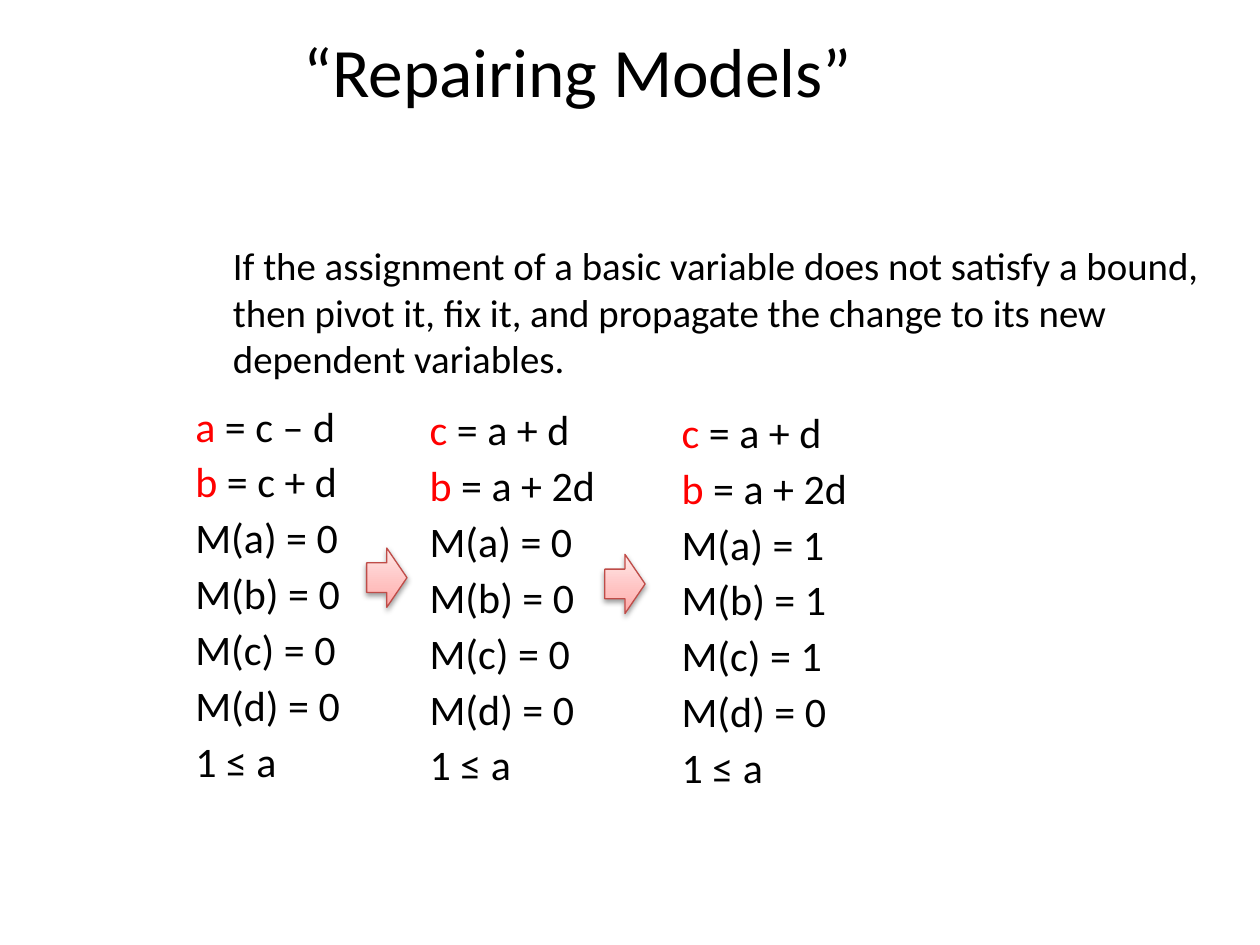
from dataclasses import dataclass

import lxml.etree
import pptx
import pptx.dml.color
import pptx.enum.shapes
import pptx.enum.text
import pptx.oxml.ns
import pptx.util

Inches = pptx.util.Inches
Pt = pptx.util.Pt
qn = pptx.oxml.ns.qn
Anchor = pptx.enum.text.MSO_ANCHOR
Align = pptx.enum.text.PP_ALIGN

BLACK = "000000"
RED = "FF0000"
EDGE = "BF4C48"
STOPS = {0: "FFA6A5", 35: "FFC0BF", 100: "FFE7E7"}


@dataclass
class Box:
    left: float
    top: float
    width: float
    height: float

    def place(self) -> list:
        return [Inches(v) for v in (self.left, self.top, self.width, self.height)]


@dataclass
class Model:
    box: Box
    rows: list[tuple[str, str]]
    values: str


def paint(code: str) -> pptx.dml.color.RGBColor:
    return pptx.dml.color.RGBColor.from_string(code)


def apply(target, style: dict) -> None:
    for key, value in style.items():
        setattr(target, key, value)


def add_text(slide, box: Box, lines: list, size: float, frame: dict, para: dict) -> None:
    body = slide.shapes.add_textbox(*box.place()).text_frame
    apply(body, {"word_wrap": True, **frame})
    for i, line in enumerate(lines):
        p = body.add_paragraph() if i else body.paragraphs[0]
        apply(p, para)
        for text, code in line:
            run = p.add_run()
            run.text = text
            apply(run.font, {"name": "Calibri", "size": Pt(size)})
            run.font.color.rgb = paint(code)


def add_model(slide, model: Model) -> None:
    lines = [[(head, RED), (tail, BLACK)] for head, tail in model.rows]
    lines += [[(f"M({name}) = {value}", BLACK)] for name, value in zip("abcd", model.values)]
    lines.append([("1 ≤ a", BLACK)])
    frame = {f"margin_{side}": 0 for side in ("left", "top", "right", "bottom")}
    add_text(slide, model.box, lines, 24, frame,
             {"line_spacing": 0.9, "space_before": Pt(6)})


def add_node(parent, tag: str, **values):
    return lxml.etree.SubElement(parent, qn(tag), **values)


def add_arrow(slide, box: Box) -> None:
    arrow = slide.shapes.add_shape(
        pptx.enum.shapes.MSO_SHAPE.RIGHT_ARROW, *box.place())
    arrow.line.color.rgb = paint(EDGE)
    arrow.line.width = Pt(0.75)
    arrow.fill.gradient()
    arrow.fill.gradient_angle = 90
    props = arrow.element.spPr
    stops = props.find(qn("a:gradFill")).find(qn("a:gsLst"))
    for old in list(stops):
        stops.remove(old)
    for pos, code in STOPS.items():
        stop = add_node(stops, "a:gs", pos=str(pos * 1000))
        add_node(stop, "a:srgbClr", val=code)
    arrow.shadow.inherit = False
    shade = add_node(props.find(qn("a:effectLst")), "a:outerShdw",
                     blurRad=str(Pt(3.1)), dist=str(Pt(1.6)),
                     dir="5400000", rotWithShape="0")
    tint = add_node(shade, "a:srgbClr", val=BLACK)
    add_node(tint, "a:alpha", val="38000")


PIVOT = [("c", " = a + d"), ("b", " = a + 2d")]
MODELS = [
    Model(Box(1.55, 3.22, 1.29, 3.05), [("a", " = c – d"), ("b", " = c + d")], "0000"),
    Model(Box(3.41, 3.25, 1.77, 3.05), PIVOT, "0000"),
    Model(Box(5.41, 3.27, 1.77, 3.05), PIVOT, "1110"),
]
ARROWS = [Box(2.91, 4.35, 0.32, 0.47), Box(4.8, 4.4, 0.32, 0.47)]
RULE = ("If the assignment of a basic variable does not satisfy a bound, "
        "then pivot it, fix it, and propagate the change to its new "
        "dependent variables.")


def main() -> None:
    deck = pptx.Presentation()
    apply(deck, {"slide_width": Inches(10), "slide_height": Inches(7.5)})
    slide = deck.slides.add_slide(deck.slide_layouts[6])
    add_text(slide, Box(0, 0.19, 9.17, 0.73), [[("“Repairing Models”", BLACK)]], 39.6,
             {"vertical_anchor": Anchor.MIDDLE}, {"alignment": Align.CENTER})
    add_text(slide, Box(1.75, 1.87, 8.25, 1.09), [[(RULE, BLACK)]], 22.2,
             {"vertical_anchor": Anchor.TOP}, {"space_before": Pt(6)})
    for model in MODELS:
        add_model(slide, model)
    for box in ARROWS:
        add_arrow(slide, box)
    deck.save("out.pptx")


if __name__ == "__main__":
    main()
